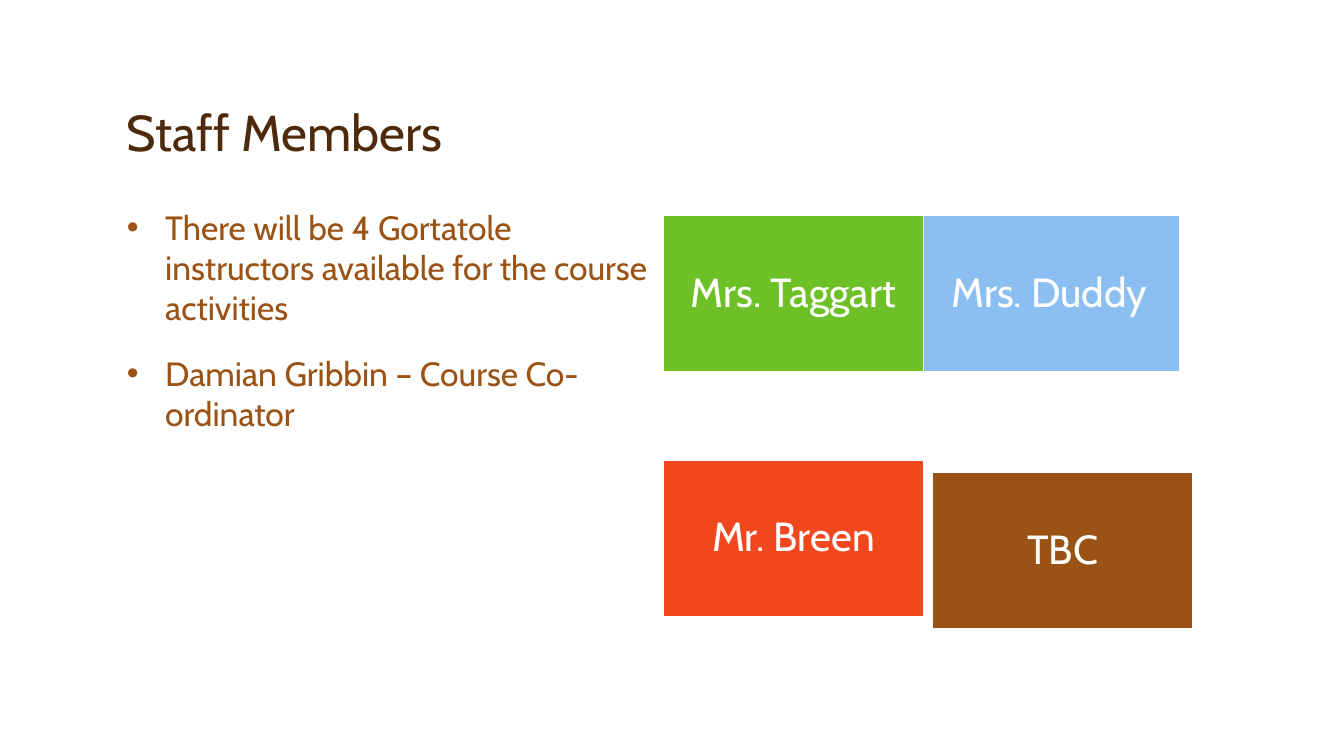
from lxml import etree
from pptx import Presentation
from pptx.dml.color import RGBColor
from pptx.enum.shapes import MSO_SHAPE
from pptx.enum.text import MSO_ANCHOR, PP_ALIGN
from pptx.oxml.ns import qn
from pptx.util import Inches, Pt

FONT = "Cabin"
WHITE = RGBColor(0xFF, 0xFF, 0xFF)
DARK_BROWN = RGBColor(0x4D, 0x2A, 0x0B)
BROWN = RGBColor(0x9A, 0x53, 0x15)
BLUE = RGBColor(0x8B, 0xBE, 0xF1)
GREEN = RGBColor(0x6D, 0xC0, 0x25)
RED = RGBColor(0xF1, 0x47, 0x1F)

TITLE = "Staff Members"
POINTS = [
    "There will be 4 Gortatole instructors available for the course activities",
    "Damian Gribbin – Course Co-ordinator",
]
# name, fill, left, top
STAFF = [
    ("Mrs. Duddy", BLUE, 9.12, 2.14),
    ("Mrs. Taggart", GREEN, 6.58, 2.14),
    ("TBC", BROWN, 9.25, 4.69),
    ("Mr. Breen", RED, 6.58, 4.57),
]
CARD_WIDTH, CARD_HEIGHT, CARD_INSET = 2.58, 1.55, 0.12
BULLET_INDENT = Inches(0.38)


def style(paragraph, size, color):
    font = paragraph.font
    font.name, font.size = FONT, Pt(size)
    font.color.rgb = color


def add_text_frame(slide, left, top, width, height):
    box = slide.shapes.add_textbox(
        Inches(left), Inches(top), Inches(width), Inches(height))
    box.text_frame.word_wrap = True
    return box.text_frame


def add_bullet(paragraph):
    properties = paragraph._p.get_or_add_pPr()
    properties.set("marL", str(BULLET_INDENT))
    properties.set("indent", str(-BULLET_INDENT))
    etree.SubElement(properties, qn("a:buFont"), typeface="Arial")
    etree.SubElement(properties, qn("a:buChar"), char="•")


def add_title(slide):
    frame = add_text_frame(slide, 1.16, 0.33, 11, 1.33)
    frame.vertical_anchor = MSO_ANCHOR.BOTTOM
    frame.text = TITLE
    paragraph = frame.paragraphs[0]
    paragraph.line_spacing = 0.9
    style(paragraph, 36, DARK_BROWN)


def add_points(slide):
    frame = add_text_frame(slide, 1.16, 2, 5.42, 4.58)
    frame.text = "\n".join(POINTS)
    for index, paragraph in enumerate(frame.paragraphs):
        add_bullet(paragraph)
        if index:
            paragraph.space_before = Pt(18)
        style(paragraph, 24, BROWN)


def add_staff_card(slide, name, color, left, top):
    card = slide.shapes.add_shape(
        MSO_SHAPE.RECTANGLE, Inches(left), Inches(top),
        Inches(CARD_WIDTH), Inches(CARD_HEIGHT))
    card.shadow.inherit = False
    card.fill.solid()
    card.fill.fore_color.rgb = color
    card.line.color.rgb = WHITE
    card.line.width = Pt(1)
    frame = card.text_frame
    frame.word_wrap = True
    frame.vertical_anchor = MSO_ANCHOR.MIDDLE
    frame.margin_left = frame.margin_right = Inches(CARD_INSET)
    frame.margin_top = frame.margin_bottom = Inches(CARD_INSET)
    frame.text = name
    paragraph = frame.paragraphs[0]
    paragraph.alignment = PP_ALIGN.CENTER
    paragraph.line_spacing = 0.9
    style(paragraph, 29, WHITE)


def main():
    presentation = Presentation()
    presentation.slide_width = Inches(13.33)
    presentation.slide_height = Inches(7.5)
    slide = presentation.slides.add_slide(presentation.slide_layouts[6])
    add_title(slide)
    add_points(slide)
    for member in STAFF:
        add_staff_card(slide, *member)
    presentation.save("out.pptx")


if __name__ == "__main__":
    main()
